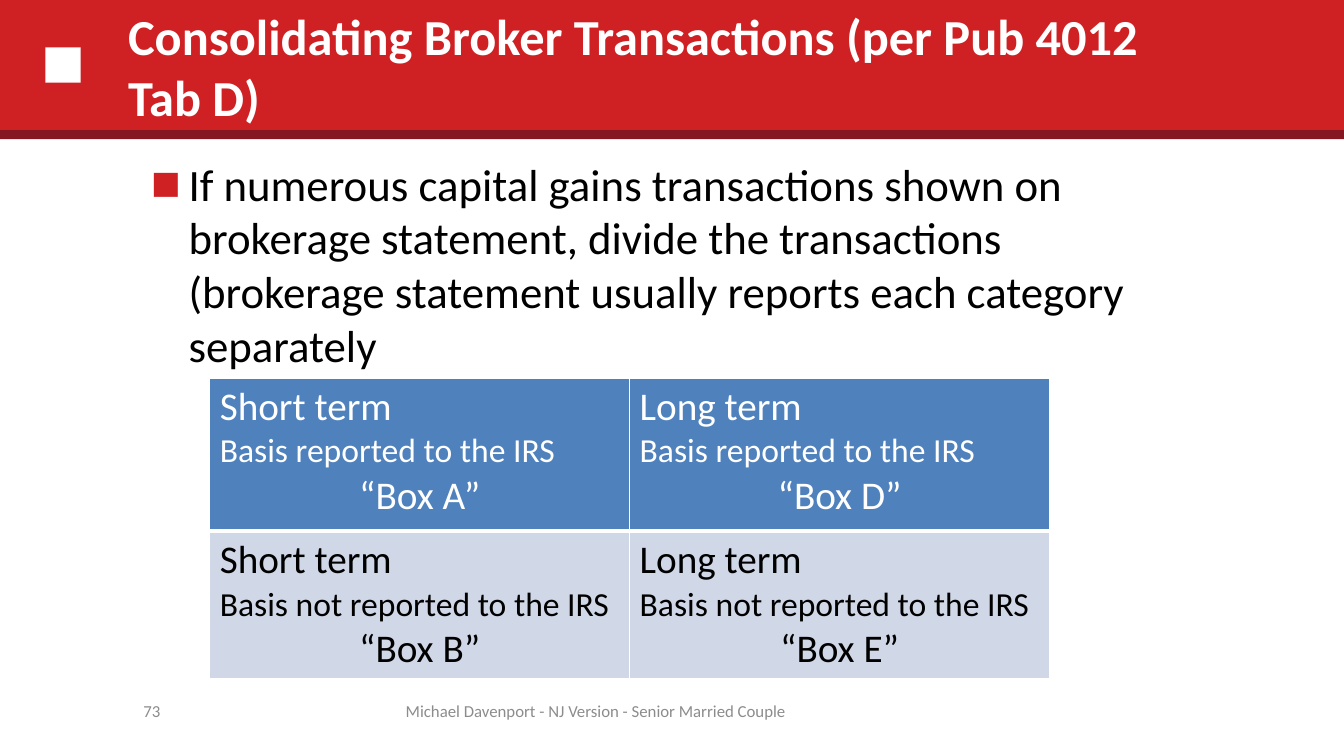
from lxml.etree import SubElement
from pptx import Presentation
from pptx.dml.color import RGBColor
from pptx.enum.shapes import MSO_SHAPE
from pptx.enum.text import MSO_ANCHOR, MSO_AUTO_SIZE, PP_ALIGN
from pptx.oxml.ns import qn
from pptx.util import Inches, Pt

COLORS = {
    "red": "CF2124", "dark_red": "841721", "white": "FFFFFF", "black": "000000",
    "gray": "8C8C8C", "blue": "4F81BD", "pale_blue": "D0D8E8",
}
FORMATS = {
    "title": {"size": Pt(36), "bold": True, "color": "white"},
    "body": {"size": Pt(32), "color": "black"},
    "footer": {"size": Pt(12), "color": "gray"},
}
# Fill and text colour of each table row, its height and its basis line
ROWS = [
    ("blue", "white", 1.52, "Basis reported to the IRS", "AD"),
    ("pale_blue", "black", 1.4, "Basis not reported to the IRS", "BE"),
]
TERMS = ["Short term", "Long term"]


def rgb(name):
    return RGBColor.from_string(COLORS[name])


def write(p, text, fmt, align=PP_ALIGN.LEFT):
    p.alignment = align
    p.space_before = Pt(0)
    r = p.add_run()
    r.text = text
    r.font.name = "Calibri"
    for key, value in fmt.items():
        if key == "color":
            r.font.color.rgb = rgb(value)
        else:
            setattr(r.font, key, value)


def place(sp, left, top, width, height):
    sp.left, sp.top = Inches(left), Inches(top)
    sp.width, sp.height = Inches(width), Inches(height)


def set_frame(tf, anchor):
    tf.word_wrap = True
    tf.auto_size = MSO_AUTO_SIZE.NONE
    tf.vertical_anchor = anchor


def add_block(slide, color, *box):
    sp = slide.shapes.add_shape(MSO_SHAPE.RECTANGLE, *map(Inches, box))
    sp.shadow.inherit = False
    sp.fill.solid()
    sp.fill.fore_color.rgb = rgb(color)
    sp.line.fill.background()


def add_footer(slide, text, align, *box):
    tf = slide.shapes.add_textbox(*map(Inches, box)).text_frame
    set_frame(tf, MSO_ANCHOR.MIDDLE)
    write(tf.paragraphs[0], text, FORMATS["footer"], align)


def add_bullet(p, color, percent, char, indent):
    pPr = p._p.get_or_add_pPr()
    pPr.set("marL", str(Inches(indent)))
    pPr.set("indent", str(-Inches(indent)))
    SubElement(SubElement(pPr, qn("a:buClr")), qn("a:srgbClr"), val=COLORS[color])
    SubElement(pPr, qn("a:buSzPct"), val=str(percent * 1000))
    SubElement(pPr, qn("a:buFont"), typeface="Calibri")
    SubElement(pPr, qn("a:buChar"), char=char)


def set_borders(cell, widths):
    tcPr = cell._tc.get_or_add_tcPr()
    for side, width in widths.items():
        ln = SubElement(tcPr, qn(f"a:ln{side}"), w=str(Pt(width)))
        SubElement(SubElement(ln, qn("a:solidFill")), qn("a:srgbClr"), val=COLORS["white"])


def fill_cell(cell, fill, color, lines):
    cell.fill.solid()
    cell.fill.fore_color.rgb = rgb(fill)
    tf = cell.text_frame
    for i, (text, size, align) in enumerate(lines):
        p = tf.add_paragraph() if i else tf.paragraphs[0]
        write(p, text, {"size": Pt(size), "color": color}, align)


def add_box_table(slide):
    table = slide.shapes.add_table(
        len(ROWS), len(TERMS), Inches(2.08), Inches(3.75), Inches(8.33), Inches(2.92)).table
    table.first_row = table.horz_banding = False
    for i, (fill, color, height, basis, boxes) in enumerate(ROWS):
        table.rows[i].height = Inches(height)
        for j, (term, box) in enumerate(zip(TERMS, boxes)):
            cell = table.cell(i, j)
            # The rule between the two rows is the heavy one
            set_borders(cell, {"L": 1, "R": 1, "T": 3 if i == 1 else 1, "B": 3 if i == 0 else 1})
            fill_cell(cell, fill, color, [
                (term, 28, PP_ALIGN.LEFT),
                (basis, 24, PP_ALIGN.LEFT),
                (f"“Box {box}”", 28, PP_ALIGN.CENTER),
            ])


def main():
    prs = Presentation()
    prs.slide_width, prs.slide_height = Inches(13.33), Inches(7.5)
    slide = prs.slides.add_slide(prs.slide_layouts[1])
    title, body = slide.placeholders

    # Header band
    add_block(slide, "red", 0, -0.01, 13.33, 1.33)
    add_block(slide, "white", 0.45, 0.47, 0.35, 0.35)
    add_block(slide, "dark_red", 0, 1.29, 13.33, 0.09)

    # Title, brought in front of the band
    slide.shapes.element.append(title.element)
    place(title, 1.17, 0.03, 10.66, 1.25)
    set_frame(title.text_frame, MSO_ANCHOR.MIDDLE)
    write(title.text_frame.paragraphs[0],
          "Consolidating Broker Transactions (per Pub 4012 Tab D)", FORMATS["title"])

    # Footer and slide number
    add_footer(slide, "Michael Davenport - NJ Version - Senior Married Couple",
               PP_ALIGN.CENTER, 3.8, 6.85, 4.22, 0.4)
    add_footer(slide, "73", PP_ALIGN.RIGHT, 0.67, 6.85, 1.02, 0.4)

    # Body
    place(body, 1.4, 1.5, 10.67, 5.17)
    set_frame(body.text_frame, MSO_ANCHOR.TOP)
    p = body.text_frame.paragraphs[0]
    add_bullet(p, "red", 70, "■", 0.37)
    write(p, "If numerous capital gains transactions shown on brokerage statement, "
             "divide the transactions (brokerage statement usually reports each "
             "category separately", FORMATS["body"])

    # Table of boxes
    add_box_table(slide)
    prs.save("out.pptx")


if __name__ == "__main__":
    main()
